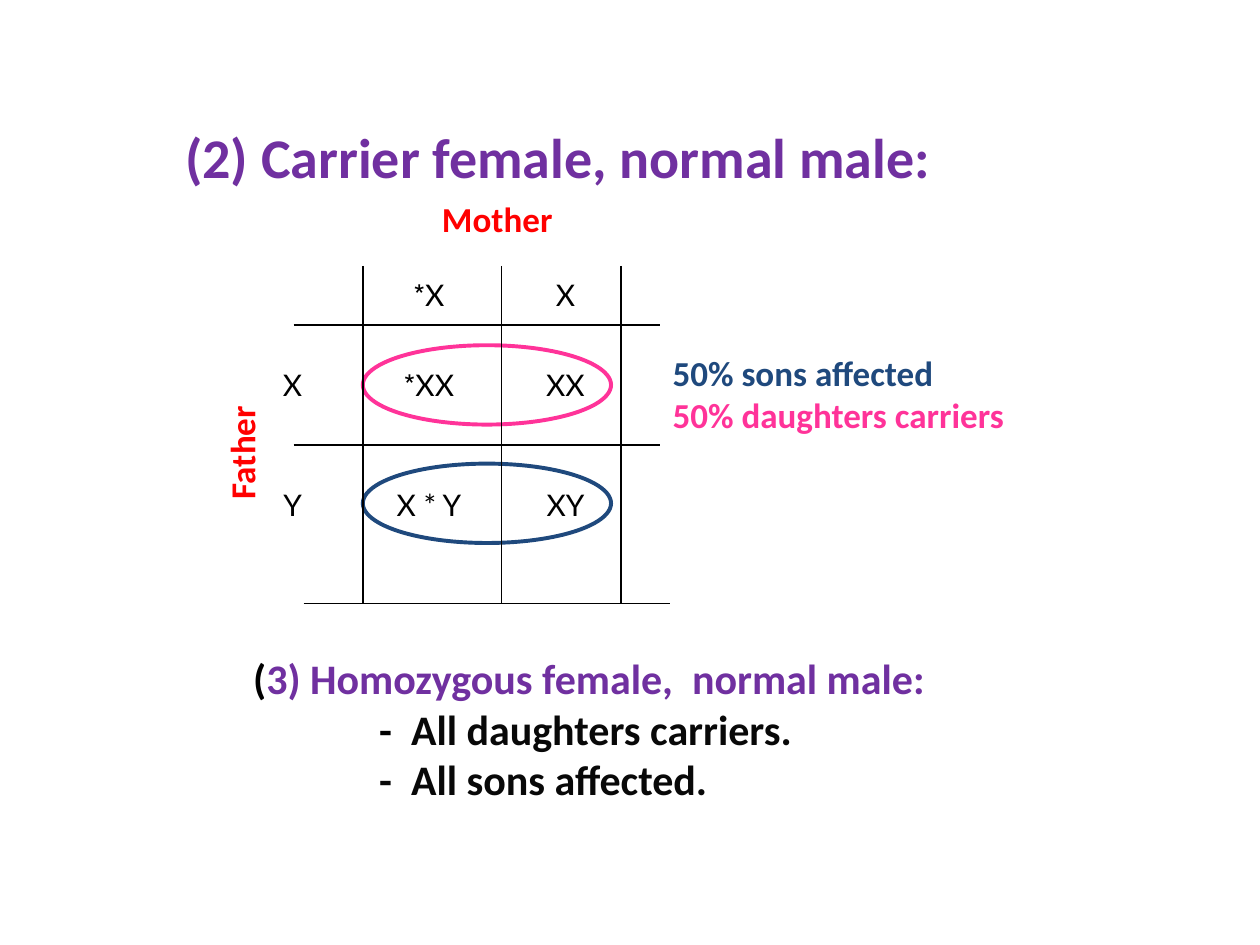
from dataclasses import dataclass
from typing import NamedTuple

from lxml import etree
from pptx import Presentation
from pptx.dml.color import RGBColor
from pptx.enum.shapes import MSO_CONNECTOR, MSO_SHAPE
from pptx.enum.text import MSO_ANCHOR, MSO_AUTO_SIZE, PP_ALIGN
from pptx.oxml.ns import qn
from pptx.util import Inches, Pt

LINE, OVAL = MSO_CONNECTOR.STRAIGHT, MSO_SHAPE.OVAL
TOP, FIXED = MSO_ANCHOR.TOP, MSO_AUTO_SIZE.NONE
LEFT, MID = PP_ALIGN.LEFT, PP_ALIGN.CENTER

# Slide grid: 100 columns by 75 rows of square units
COLS, ROWS = 100, 75
UNIT = Inches(0.1)


@dataclass(frozen=True)
class Theme:
    font: str = "Calibri"
    cell_font: str = "Lato"
    purple: str = "7030A0"
    red: str = "FF0000"
    blue: str = "1F497D"
    pink: str = "FF3399"
    black: str = "000000"
    dark: str = "080808"
    title: int = 32
    body: int = 24
    label: int = 20
    cell: int = 17
    rule: float = 1
    ring: float = 2.25


THEME = Theme()


class Box(NamedTuple):
    col: float
    row: float
    wide: float
    high: float


class Part(NamedTuple):
    text: str
    color: str


class Label(NamedTuple):
    box: Box
    lines: list[list[Part]]
    wrap: bool = False
    turn: int = 0


class Rule(NamedTuple):
    start: tuple[float, float]
    end: tuple[float, float]


def span(*units: float) -> list[int]:
    return [round(u * UNIT) for u in units]


def style(item, values: dict) -> None:
    for name, value in values.items():
        setattr(item, name, value)


def write(par, parts: list[Part], size: float, font: str, bold: bool = True) -> None:
    for part in parts:
        run = par.add_run()
        run.text = part.text
        style(run.font, {"name": font, "size": Pt(size), "bold": bold})
        run.font.color.rgb = RGBColor.from_string(part.color)


def fill_text(frame, lines: list[list[Part]], size: float, wrap: bool = True) -> None:
    style(frame, {"word_wrap": wrap, "auto_size": FIXED, "vertical_anchor": TOP})
    for i, parts in enumerate(lines):
        par = frame.add_paragraph() if i else frame.paragraphs[0]
        style(par, {"alignment": LEFT, "space_before": Pt(0)})
        write(par, parts, size, THEME.font)


def place(shape, box: Box) -> None:
    style(shape, dict(zip(("left", "top", "width", "height"), span(*box))))


def add_label(slide, label: Label) -> None:
    shape = slide.shapes.add_textbox(*span(*label.box))
    shape.rotation = label.turn
    fill_text(shape.text_frame, label.lines, THEME.label, label.wrap)


def add_ring(slide, box: Box, color: str) -> None:
    ring = slide.shapes.add_shape(OVAL, *span(*box))
    ring.shadow.inherit = False
    ring.fill.background()
    ring.line.color.rgb = RGBColor.from_string(color)
    ring.line.width = Pt(THEME.ring)


def add_rule(slide, rule: Rule) -> None:
    line = slide.shapes.add_connector(LINE, *span(*rule.start, *rule.end))
    line.line.color.rgb = RGBColor.from_string(THEME.black)
    line.line.width = Pt(THEME.rule)
    etree.SubElement(line._element.spPr, qn("a:effectLst"))


def add_cross(slide, box: Box, highs: list[float], cells: list[list[str]]) -> None:
    table = slide.shapes.add_table(len(cells), len(cells[0]), *span(*box)).table
    style(table, {"first_row": False, "horz_banding": False})
    for row, high in zip(table.rows, highs):
        row.height = span(high)[0]
    for r, texts in enumerate(cells):
        for c, text in enumerate(texts):
            cell = table.cell(r, c)
            cell.fill.background()
            cell.margin_top = span(3.33)[0]
            par = cell.text_frame.paragraphs[0]
            par.alignment = MID
            par._p.get_or_add_pPr().set("rtl", "1")
            if text:
                write(par, [Part(text, THEME.black)], THEME.cell,
                      THEME.cell_font, False)


# Content
HEAD = Box(13.7, 11.3, 63.6, 4.4)
LIST = Box(19.1, 51.3, 68.7, 13.1)
CROSS = Box(17.8, 18.7, 32.5, 26.1)
HIGHS = [7.1, 9.5, 9.5]
CELLS = [["", "X*", "X"], ["X", "XX*", "XX"], ["Y", "X * Y", "XY"]]
LABELS = [
    Label(Box(34.1, 15.2, 11.4, 4.4), [[Part("Mother", THEME.red)]]),
    Label(Box(13.9, 33.1, 10.6, 4.4), [[Part("Father", THEME.red)]], turn=270),
    Label(Box(52.4, 27.4, 37, 7.7),
          [[Part("50% sons affected", THEME.blue)],
           [Part("50% daughters carriers", THEME.pink)]], wrap=True),
]
POINTS = [
    [Part("(", THEME.black), Part("3) Homozygous female,  normal male:", THEME.purple)],
    [Part("-  ", THEME.black), Part("All daughters carriers.", THEME.dark)],
    [Part("-  All sons affected.", THEME.dark)],
]
RINGS = [(36.8, THEME.blue), (27.4, THEME.pink)]
RULES = [Rule((x, 21.1), (x, 47.9)) for x in (28.8, 49.3, 39.8)]
RULES += [Rule((x, y), (x + 29.1, y))
          for x, y in ((23.3, 25.8), (23.3, 35.3), (24.1, 47.9))]


def main() -> None:
    deck = Presentation()
    deck.slide_width, deck.slide_height = span(COLS, ROWS)
    slide = deck.slides.add_slide(deck.slide_layouts[1])

    # Heading
    title, body = slide.placeholders
    place(title, HEAD)
    fill_text(title.text_frame,
              [[Part("(2) Carrier female, normal male:", THEME.purple)]], THEME.title)
    title.text_frame.paragraphs[0].line_spacing = 0.55

    # Closing list, with the points set in from its first line
    place(body, LIST)
    fill_text(body.text_frame, POINTS, THEME.body)
    for i, par in enumerate(body.text_frame.paragraphs):
        props = par._p.get_or_add_pPr()
        props.set("marL", str(Inches(1) if i else 0))
        props.set("indent", "0")
        etree.SubElement(props, qn("a:buNone"))

    # Cross of the parents' genes
    add_cross(slide, CROSS, HIGHS, CELLS)
    for label in LABELS:
        add_label(slide, label)
    for row, color in RINGS:
        add_ring(slide, Box(28.8, row, 19.7, 6.3), color)
    for rule in RULES:
        add_rule(slide, rule)

    deck.save("out.pptx")


if __name__ == "__main__":
    main()
